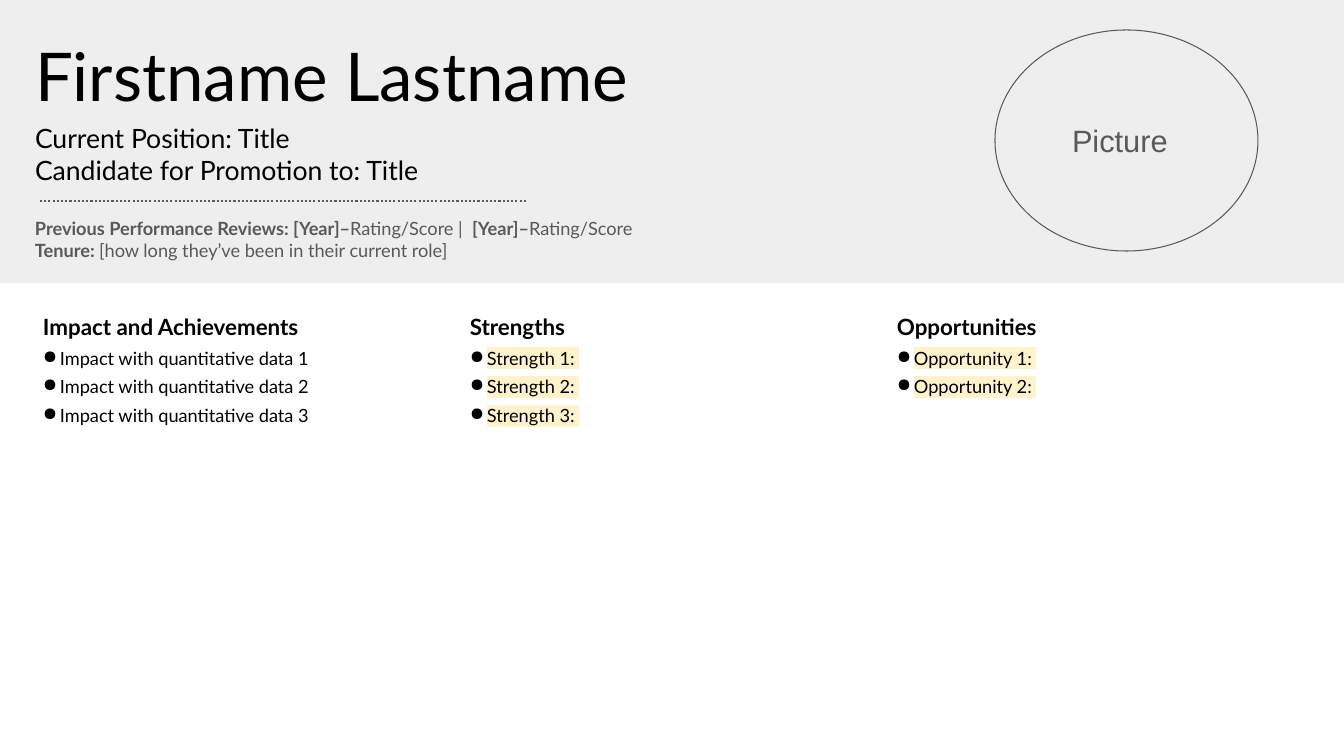
"""Build a one-page promotion profile with a header band and three columns."""
from lxml.etree import SubElement
from pptx import Presentation
from pptx.dml.color import RGBColor
from pptx.enum.dml import MSO_LINE_DASH_STYLE as DASH
from pptx.enum.shapes import MSO_CONNECTOR as CONNECTOR, MSO_SHAPE as SHAPE
from pptx.enum.text import MSO_ANCHOR as ANCHOR, MSO_AUTO_SIZE as FIT, PP_ALIGN as ALIGN
from pptx.oxml.ns import qn
from pptx.util import Pt

PX = 914400 / 100.8
BLACK, GREY, BAND, HIGHLIGHT = "000000", "595959", "EEEEEE", "FFF2CC"


def px(*lengths):
    return [round(length * PX) for length in lengths]


def style(font, size, color, name="Lato", bold=False):
    font.size, font.name, font.bold = Pt(size), name, bold
    font.color.rgb = RGBColor.from_string(color)


deck = Presentation()
deck.slide_width, deck.slide_height = px(1344, 756)
page = deck.slides.add_slide(deck.slide_layouts[5])
shapes = page.shapes

band = shapes.add_shape(SHAPE.RECTANGLE, *px(0, 0, 1344, 283))
portrait = shapes.add_shape(SHAPE.OVAL, *px(995, 30, 263, 221))
for shape in (band, portrait):
    shape.shadow.inherit = False
    shape.fill.solid()
    shape.fill.fore_color.rgb = RGBColor.from_string(BAND)
band.line.fill.background()
portrait.line.color.rgb = RGBColor.from_string(GREY)
portrait.line.width = Pt(0.75)

label = shapes.add_textbox(*px(1062, 112, 128, 57)).text_frame
label.margin_left = label.margin_right = label.margin_top = label.margin_bottom = px(10)[0]
label.word_wrap = True
label.text = "Picture"
style(label.paragraphs[0].font, 22, GREY, "Arial")

title = shapes.title
title.left, title.top, title.width, title.height = px(35, 34, 659, 214)
shapes._spTree.append(title._element)
details = shapes.add_textbox(*px(35, 217, 736, 61))

columns = [
    ("Impact and Achievements", [f"Impact with quantitative data {n}" for n in (1, 2, 3)], False),
    ("Strengths", [f"Strength {n}: " for n in (1, 2, 3)], True),
    ("Opportunities", [f"Opportunity {n}: " for n in (1, 2)], True),
]
column_boxes = [shapes.add_textbox(*px(43 + 427 * i, 309, 404, 418)) for i in range(len(columns))]

for box in (title, details, *column_boxes):
    frame = box.text_frame
    frame.margin_left = frame.margin_right = frame.margin_top = frame.margin_bottom = 0
    frame.word_wrap = True
    frame.auto_size = FIT.NONE
    frame.vertical_anchor = ANCHOR.TOP

title.text_frame.text = "Firstname Lastname\nCurrent Position: Title\nCandidate for Promotion to: Title"
for para, size in zip(title.text_frame.paragraphs, (48, 19, 19)):
    para.alignment = ALIGN.LEFT
    style(para.font, size, BLACK)
title.text_frame.paragraphs[1].space_before = Pt(5)

reviews = details.text_frame.paragraphs[0]
tenure = details.text_frame.add_paragraph()
for para, texts in (
    (reviews, ["Previous Performance Reviews: [Year]–", "Rating/Score |  ", "[Year]–", "Rating/Score"]),
    (tenure, ["Tenure: ", "[how long they’ve been in their current role]"]),
):
    style(para.font, 13, GREY)
    for position, text in enumerate(texts):
        span = para.add_run()
        span.text = text
        span.font.bold = position % 2 == 0

divider = shapes.add_connector(CONNECTOR.STRAIGHT, *px(40, 201, 527, 201))
divider.line.color.rgb = RGBColor.from_string(GREY)
divider.line.width = Pt(1.5)
divider.line.dash_style = DASH.ROUND_DOT
SubElement(divider._element.spPr, qn("a:effectLst"))

for box, (heading, items, highlighted) in zip(column_boxes, columns):
    frame = box.text_frame
    frame.text = heading
    frame.paragraphs[0].line_spacing = 1.15
    style(frame.paragraphs[0].font, 16, BLACK, bold=True)
    for item in items:
        para = frame.add_paragraph()
        para.space_before = Pt(5)
        properties = para._p.get_or_add_pPr()
        indent = px(17)[0]
        properties.set("marL", str(indent))
        properties.set("indent", str(-indent))
        bullet_color = SubElement(properties, qn("a:buClr"))
        SubElement(bullet_color, qn("a:srgbClr"), val=BLACK)
        SubElement(properties, qn("a:buChar"), char="●")
        style(para.font, 13, BLACK)
        span = para.add_run()
        span.text = item
        if highlighted:
            marker = SubElement(span._r.get_or_add_rPr(), qn("a:highlight"))
            SubElement(marker, qn("a:srgbClr"), val=HIGHLIGHT)

deck.save("out.pptx")
